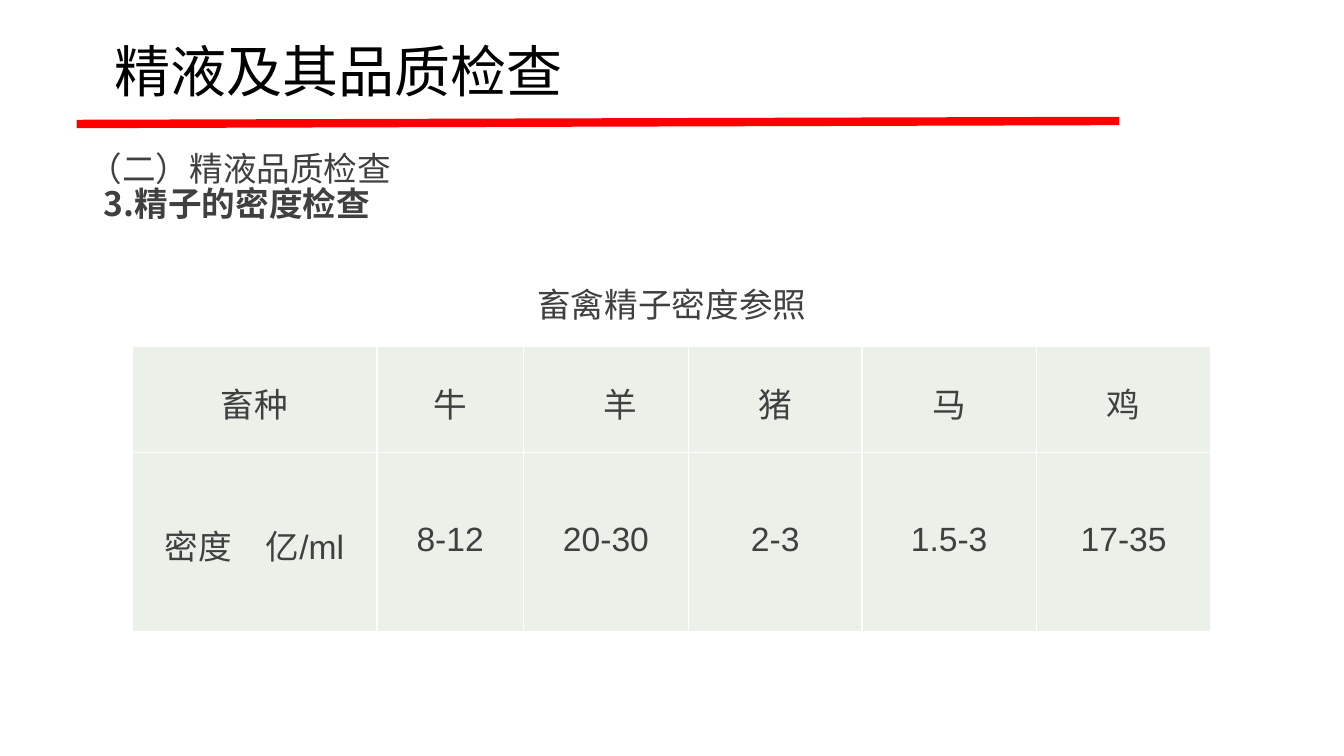
"""Build a slide on sperm density with a reference table for livestock."""
from dataclasses import dataclass

from lxml import etree
from pptx import Presentation
from pptx.dml.color import RGBColor
from pptx.enum import shapes, text
from pptx.oxml import ns
from pptx.util import Inches, Pt

BLACK = RGBColor(0x00, 0x00, 0x00)
GRAY = RGBColor(0x40, 0x40, 0x40)
RED = RGBColor(0xFF, 0x00, 0x00)
PALE_GREEN = RGBColor(0xEB, 0xF0, 0xE9)
BORDER_COLOR = "FFFFFF"
CJK, LATIN = "Noto Sans CJK SC", "Arial"
COLUMN_WIDTHS = (2.43, 1.45, 1.64, 1.72, 1.73, 1.73)
ROW_HEIGHTS = (1.05, 1.78)


@dataclass(frozen=True)
class Span:
    words: str
    font: str = CJK
    size: float = 24
    color: RGBColor = GRAY
    bold: bool = False


@dataclass(frozen=True)
class Entry:
    spans: tuple[Span, ...]
    top: float
    indent: float = 0
    tab: float = 0


HEADER_ROW = tuple(
    Entry((Span(animal),), 0.32, indent=0.8 if animal == "羊" else 0)
    for animal in ("畜种", "牛", "羊", "猪", "马", "鸡")
)
DENSITY_ROW = (
    Entry((Span("密度\t亿"), Span("/ml", LATIN)), 0.67, tab=0.86),
    *(Entry((Span(density, LATIN),), 0.68)
      for density in ("8-12", "20-30", "2-3", "1.5-3", "17-35")),
)


def place(shape, left: float, top: float, width: float, height: float) -> None:
    shape.left, shape.top = Inches(left), Inches(top)
    shape.width, shape.height = Inches(width), Inches(height)


def write(para, spans: tuple[Span, ...], align, indent: float = 0) -> None:
    properties = para._p.get_or_add_pPr()
    properties.set("marL", str(Inches(indent)))
    properties.set("indent", "0")
    para.alignment = align
    para.space_before = Pt(0)
    for span in spans:
        run = para.add_run()
        run.text = span.words
        run.font.name = span.font
        run.font.size = Pt(span.size)
        run.font.bold = span.bold
        run.font.color.rgb = span.color
        latin = run._r.get_or_add_rPr().find(ns.qn("a:latin"))
        east_asian = etree.Element(ns.qn("a:ea"), typeface=CJK)
        latin.addnext(east_asian)


def set_borders(cell) -> None:
    properties = cell._tc.get_or_add_tcPr()
    for position, side in enumerate(("lnL", "lnR", "lnT", "lnB")):
        line = etree.Element(ns.qn(f"a:{side}"), w=str(Pt(1)))
        fill = etree.SubElement(line, ns.qn("a:solidFill"))
        etree.SubElement(fill, ns.qn("a:srgbClr"), val=BORDER_COLOR)
        properties.insert(position, line)


def fill_cell(cell, entry: Entry) -> None:
    cell.margin_left = cell.margin_right = cell.margin_bottom = 0
    cell.margin_top = Inches(entry.top)
    cell.fill.solid()
    cell.fill.fore_color.rgb = PALE_GREEN
    set_borders(cell)
    para = cell.text_frame.paragraphs[0]
    if entry.tab:
        tabs = etree.SubElement(para._p.get_or_add_pPr(), ns.qn("a:tabLst"))
        etree.SubElement(tabs, ns.qn("a:tab"), pos=str(Inches(entry.tab)), algn="l")
    align = text.PP_ALIGN.LEFT if entry.indent else text.PP_ALIGN.CENTER
    write(para, entry.spans, align, entry.indent)


def add_title(slide) -> None:
    title = slide.shapes.title
    place(title, 0.92, 0.01, 11.5, 1.45)
    frame = title.text_frame
    frame.auto_size = text.MSO_AUTO_SIZE.NONE
    frame.vertical_anchor = text.MSO_ANCHOR.MIDDLE
    para = frame.paragraphs[0]
    write(para, (Span("精液及其品质检查", size=40, color=BLACK),), text.PP_ALIGN.LEFT, 0.12)
    para.line_spacing = 0.9


def add_headings(slide) -> None:
    body = slide.placeholders[1]
    place(body, 0.63, 1.48, 10.62, 0.62)
    frame = body.text_frame
    frame.auto_size = text.MSO_AUTO_SIZE.NONE
    frame.vertical_anchor = text.MSO_ANCHOR.TOP
    headings = ((Span("（二）精液品质检查"), 0.15), (Span("3.精子的密度检查", bold=True), 0.3))
    for number, (span, indent) in enumerate(headings):
        para = frame.add_paragraph() if number else frame.paragraphs[0]
        etree.SubElement(para._p.get_or_add_pPr(), ns.qn("a:buNone"))
        write(para, (span,), text.PP_ALIGN.LEFT, indent)
        para.line_spacing = 0.86


def add_rule(slide) -> None:
    rule = slide.shapes.add_connector(
        shapes.MSO_CONNECTOR.STRAIGHT, Inches(0.76), Inches(1.23), Inches(11.1), Inches(1.2)
    )
    rule.line.color.rgb = RED
    rule.line.width = Pt(6)
    etree.SubElement(rule._element.spPr, ns.qn("a:effectLst"))


def add_density_table(slide) -> None:
    frame = slide.shapes.add_table(
        len(ROW_HEIGHTS), len(COLUMN_WIDTHS), Inches(1.31), Inches(3.44),
        Inches(sum(COLUMN_WIDTHS)), Inches(sum(ROW_HEIGHTS)),
    )
    table = frame.table
    table.first_row = table.horz_banding = False
    for column, width in zip(table.columns, COLUMN_WIDTHS):
        column.width = Inches(width)
    for row, height, entries in zip(table.rows, ROW_HEIGHTS, (HEADER_ROW, DENSITY_ROW)):
        row.height = Inches(height)
        for cell, entry in zip(row.cells, entries):
            fill_cell(cell, entry)


def add_caption(slide) -> None:
    box = slide.shapes.add_textbox(Inches(5.32), Inches(2.81), Inches(2.7), Inches(0.43))
    frame = box.text_frame
    frame.word_wrap = True
    frame.auto_size = text.MSO_AUTO_SIZE.SHAPE_TO_FIT_TEXT
    frame.margin_left = frame.margin_right = frame.margin_bottom = 0
    frame.margin_top = Inches(0.01)
    write(frame.paragraphs[0], (Span("畜禽精子密度参照"),), text.PP_ALIGN.LEFT, 0.01)


def main() -> None:
    deck = Presentation()
    deck.slide_width, deck.slide_height = Inches(13.33), Inches(7.5)
    page = deck.slides.add_slide(deck.slide_layouts[1])
    add_headings(page)
    add_rule(page)
    add_title(page)
    add_density_table(page)
    add_caption(page)
    deck.save("out.pptx")


if __name__ == "__main__":
    main()
